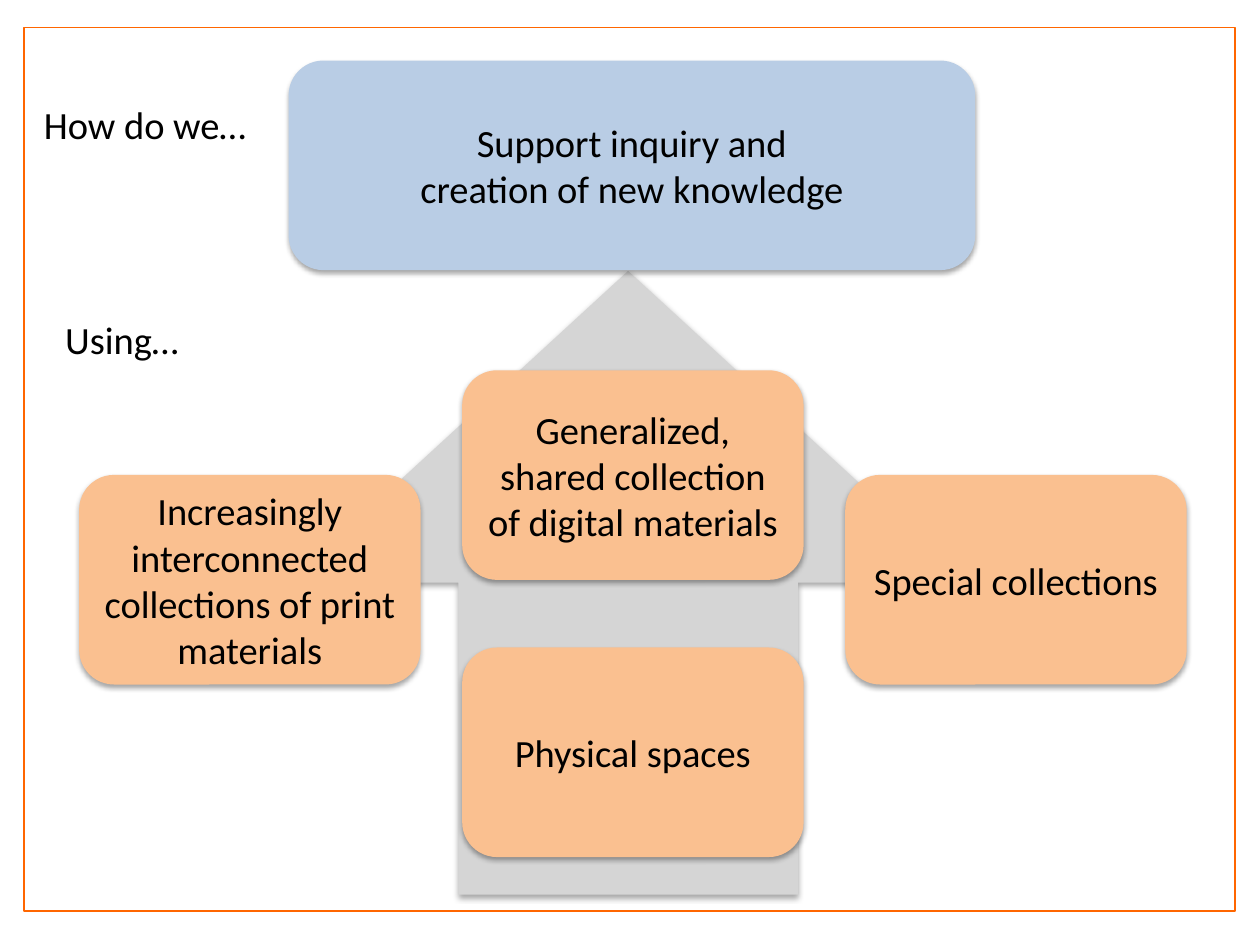
from lxml import etree
from pptx import Presentation
from pptx.dml.color import RGBColor
from pptx.enum import shapes, text
from pptx.oxml.ns import qn
from pptx.util import Pt

WHITE = RGBColor(0xFF, 0xFF, 0xFF)
BLACK = RGBColor(0x00, 0x00, 0x00)
ORANGE = RGBColor(0xFF, 0x66, 0x00)
GRAY = RGBColor(0xD5, 0xD5, 0xD5)
BLUE = RGBColor(0xB9, 0xCD, 0xE5)
PEACH = RGBColor(0xFA, 0xC0, 0x90)

PRESET = shapes.MSO_SHAPE
CARD_WIDTH, CARD_HEIGHT = 195.1, 119.8


def add_soft_shadow(shape):
    effects = shape._element.spPr.find(qn("a:effectLst"))
    shadow = etree.SubElement(effects, qn("a:outerShdw"), blurRad=str(Pt(3.1)),
                              dist=str(Pt(1.8)), dir="5400000", rotWithShape="0")
    color = etree.SubElement(shadow, qn("a:srgbClr"), val=str(BLACK))
    etree.SubElement(color, qn("a:alpha"), val="35000")


def add_block(slide, preset, box, fill, line=None, shadow=True):
    block = slide.shapes.add_shape(preset, *map(Pt, box))
    block.fill.solid()
    block.fill.fore_color.rgb = fill
    if line is None:
        block.line.fill.background()
    else:
        block.line.color.rgb = line
        block.line.width = Pt(1)
    block.shadow.inherit = False
    if shadow:
        add_soft_shadow(block)
    return block


def write(shape, *lines, align=text.PP_ALIGN.LEFT, anchor=text.MSO_ANCHOR.TOP,
          size=22, color=BLACK, font="Calibri"):
    frame = shape.text_frame
    frame.word_wrap = True
    frame.vertical_anchor = anchor
    for index, line in enumerate(lines):
        paragraph = frame.add_paragraph() if index else frame.paragraphs[0]
        paragraph.alignment = align
        run = paragraph.add_run()
        run.text = line
        run.font.size = Pt(size)
        run.font.name = font
        run.font.color.rgb = color


def add_card(slide, box, fill, *lines):
    card = add_block(slide, PRESET.ROUNDED_RECTANGLE, box, fill)
    write(card, *lines, align=text.PP_ALIGN.CENTER, anchor=text.MSO_ANCHOR.MIDDLE)


def add_resources(slide, left, top):
    """Place the cards in three even columns, the outer two lower than the middle."""
    column_step, side_drop, spaces_drop = 218.9, 59.8, 158.4
    for column, drop, label in (
        (0, side_drop, "Increasingly interconnected collections of print materials"),
        (1, 0, "Generalized, shared collection of digital materials"),
        (2, side_drop, "Special collections"),
        (1, spaces_drop, "Physical spaces"),
    ):
        box = (left + column * column_step, top + drop, CARD_WIDTH, CARD_HEIGHT)
        add_card(slide, box, PEACH, label)


def add_prompt(slide, left, top, wording):
    prompt = slide.shapes.add_textbox(Pt(left), Pt(top), Pt(137.5), Pt(33.8))
    write(prompt, wording)
    prompt.text_frame.auto_size = text.MSO_AUTO_SIZE.SHAPE_TO_FIT_TEXT


def build_slide(slide):
    add_block(slide, PRESET.RECTANGLE, (13.7, 15.8, 692, 504.7), WHITE,
              line=ORANGE, shadow=False)
    add_block(slide, PRESET.UP_ARROW, (164.9, 154.8, 388.1, 356.4), GRAY)
    add_card(slide, (164.9, 34.6, 392.4, CARD_HEIGHT), BLUE,
             "Support inquiry and", "creation of new knowledge")
    add_resources(slide, left=45.2, top=211.6)
    add_prompt(slide, 18, 54, "How do we…")
    add_prompt(slide, 30.2, 177.1, "Using…")


def main():
    deck = Presentation()
    deck.slide_width, deck.slide_height = Pt(720), Pt(540)
    build_slide(deck.slides.add_slide(deck.slide_layouts[6]))
    deck.save("out.pptx")


if __name__ == "__main__":
    main()
